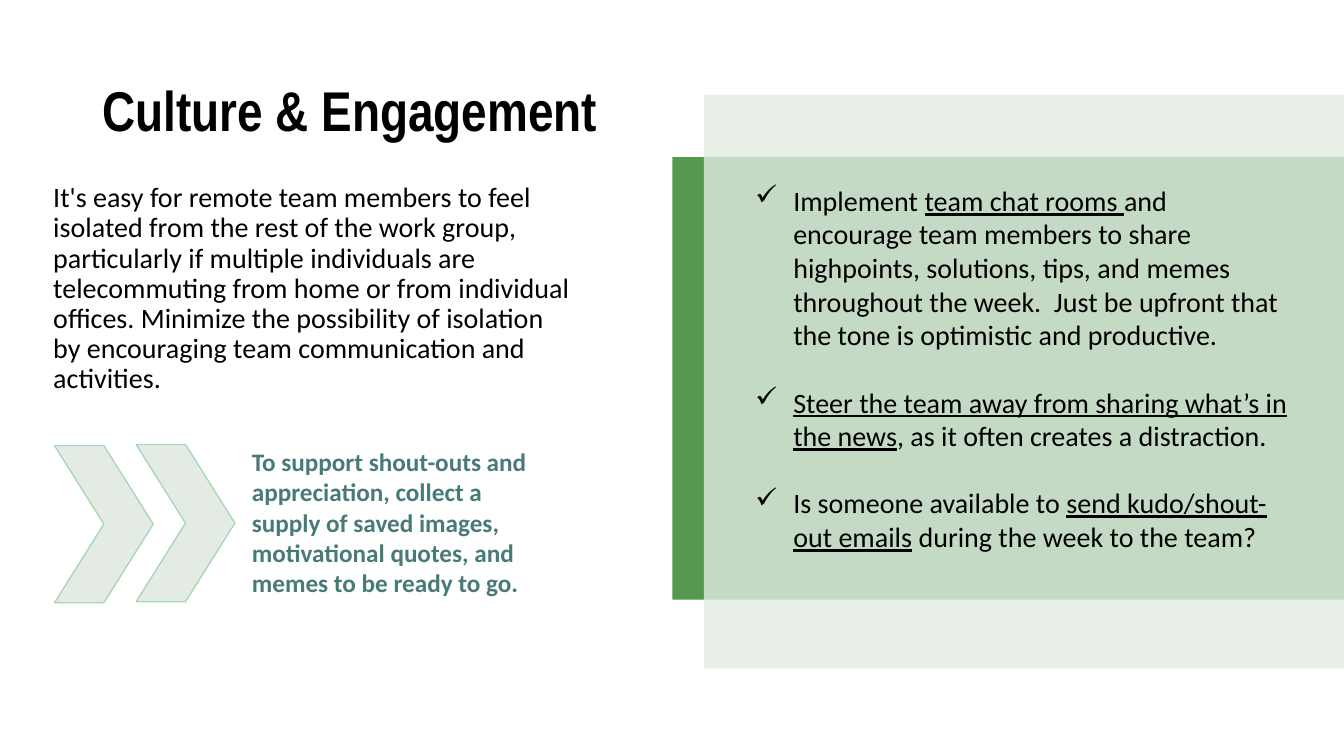
from lxml import etree
from pptx import Presentation
from pptx.dml.color import RGBColor
from pptx.enum.shapes import MSO_SHAPE
from pptx.enum.text import MSO_ANCHOR
from pptx.oxml.ns import qn
from pptx.util import Inches, Pt

COLORS = {
    "black": "000000",
    "green": "559950",
    "veil": "E2EBE2",
    "chevron": "E4EBE4",
    "chevron_line": "A9D8B7",
    "teal": "487B78",
}

prs = Presentation()
prs.slide_width, prs.slide_height = Inches(13.33), Inches(7.5)
s = prs.slides.add_slide(prs.slide_layouts[6])


def add_block(kind, box, fill, line=None):
    sp = s.shapes.add_shape(kind, *map(Inches, box))
    sp.shadow.inherit = False
    sp.fill.solid()
    sp.fill.fore_color.rgb = RGBColor.from_string(COLORS[fill])
    if line:
        sp.line.color.rgb = RGBColor.from_string(COLORS[line])
        sp.line.width = Pt(1)
    else:
        sp.line.fill.background()
    return sp


def add_text(box, paragraphs, size, font="Calibri", color="black", bold=False):
    """Add a text box; each paragraph is a list of (words, underlined) runs."""
    tf = s.shapes.add_textbox(*map(Inches, box)).text_frame
    tf.word_wrap = True
    for i, runs in enumerate(paragraphs):
        p = tf.add_paragraph() if i else tf.paragraphs[0]
        for words, underlined in runs:
            r = p.add_run()
            r.text = words
            r.font.name, r.font.size, r.font.bold = font, Pt(size), bold
            r.font.underline = underlined
            r.font.color.rgb = RGBColor.from_string(COLORS[color])
    return tf


# Right-hand panel: green band under a translucent veil
add_block(MSO_SHAPE.RECTANGLE, (6.67, 1.56, 6.66, 4.39), "green")
veil = add_block(MSO_SHAPE.RECTANGLE, (6.98, 0.94, 6.35, 5.69), "veil")
veil_color = veil.fill._xPr.find(qn("a:solidFill"))[0]
etree.SubElement(veil_color, qn("a:alpha"), val="80000")

# Title and introduction
title = add_text((0.92, 0.4, 11.5, 1.45), [[("Culture & Engagement", False)]],
                 40, font="Arial Narrow", bold=True)
title.vertical_anchor = MSO_ANCHOR.MIDDLE
intro = add_text((0.43, 1.77, 5.34, 2.26), [[(
    "It's easy for remote team members to feel isolated from the rest of the work group, "
    "particularly if multiple individuals are telecommuting from home or from individual "
    "offices. Minimize the possibility of isolation by encouraging team communication and "
    "activities.", False)]], 20)
for tf in (title, intro):
    tf.paragraphs[0].line_spacing = 0.9

# Checklist
tips = add_text((7.39, 1.77, 5.53, 3.8), [
    [("Implement ", False), ("team chat rooms ", True),
     ("and encourage team members to share highpoints, solutions, tips, and memes "
      "throughout the week.  Just be upfront that the tone is optimistic and productive.",
      False)],
    [("Steer the team away from sharing what’s in the news", True),
     (", as it often creates a distraction.", False)],
    [("Is someone available to ", False), ("send kudo/shout-out emails", True),
     (" during the week to the team?", False)],
], 20)
for i, p in enumerate(tips.paragraphs):
    if i:
        p.space_before = Pt(24)
    pPr = p._p.get_or_add_pPr()
    pPr.set("marL", str(Inches(0.38)))
    pPr.set("indent", str(-Inches(0.38)))
    etree.SubElement(pPr, qn("a:buFont"), typeface="Wingdings")
    etree.SubElement(pPr, qn("a:buChar"), char="ü")

# Shout-out call
add_text((2.4, 4.38, 3.04, 1.62), [[(
    "To support shout-outs and appreciation, collect a supply of saved images, "
    "motivational quotes, and memes to be ready to go.", False)]],
    18, color="teal", bold=True)
for left, top in ((0.54, 4.42), (1.35, 4.41)):
    add_block(MSO_SHAPE.CHEVRON, (left, top, 0.98, 1.56), "chevron", "chevron_line")

prs.save("out.pptx")
